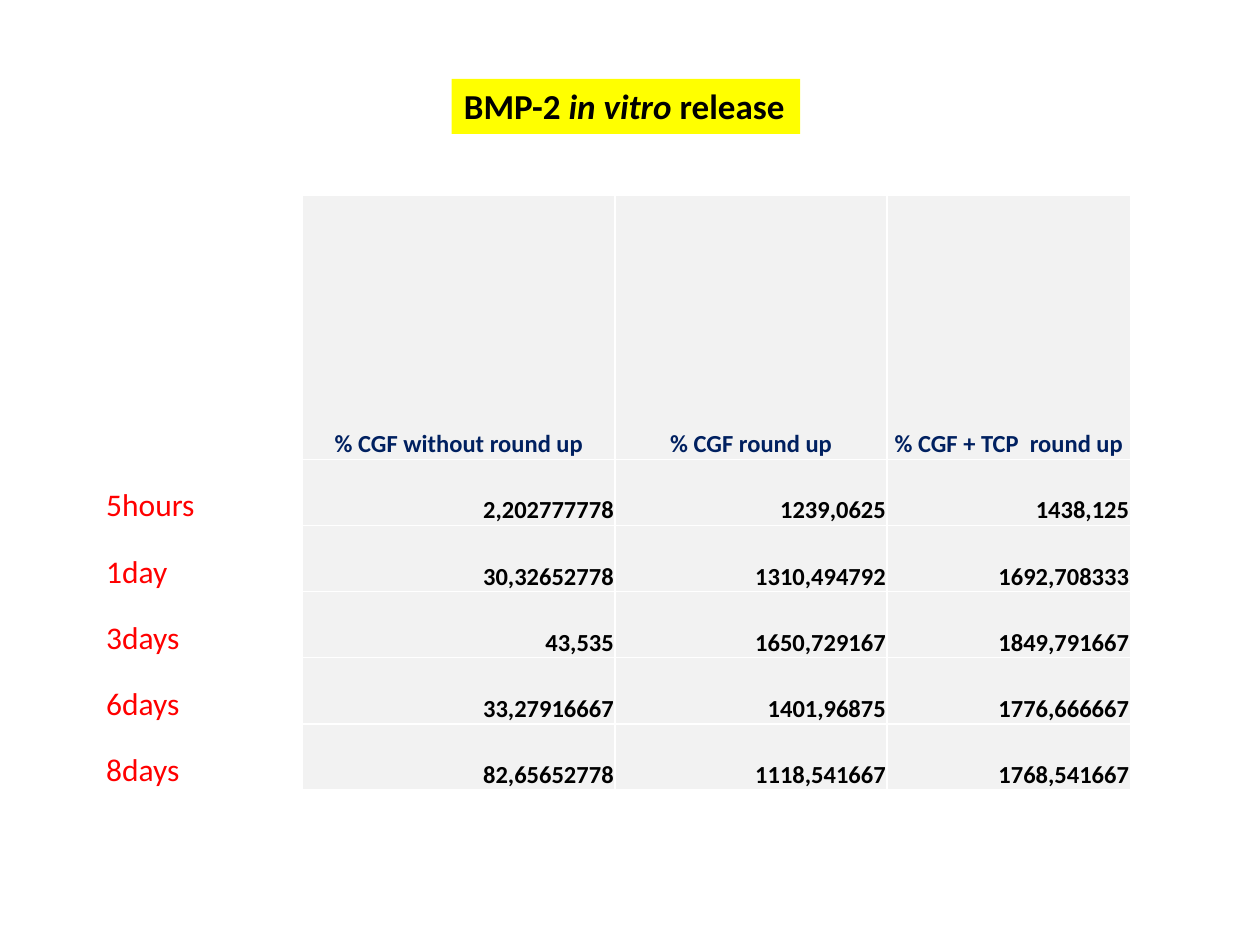
from lxml import etree
from pptx import Presentation
from pptx import util as u
from pptx.dml import color
from pptx.enum import text
from pptx.oxml import ns

COLORS = {"title": "FFFF00", "cell": "F2F2F2", "border": "FFFFFF",
          "header": "002060", "label": "FF0000", "body": "000000"}

HEADERS = ["", "% CGF without round up", "% CGF round up", "% CGF + TCP  round up"]
RELEASE = [
    ["5hours", "2,202777778", "1239,0625", "1438,125"],
    ["1day", "30,32652778", "1310,494792", "1692,708333"],
    ["3days", "43,535", "1650,729167", "1849,791667"],
    ["6days", "33,27916667", "1401,96875", "1776,666667"],
    ["8days", "82,65652778", "1118,541667", "1768,541667"],
]


class SlideBuilder:
    font = "Calibri"
    border_width = u.Pt(1)
    cell_format = {"margin_left": u.Pt(0.7), "margin_right": u.Pt(0.7),
                   "margin_top": u.Pt(0.7), "margin_bottom": 0,
                   "vertical_anchor": text.MSO_ANCHOR.BOTTOM}
    # Font size, weight, colour and alignment of each kind of cell
    cell_text = {
        "header": (14, True, text.PP_ALIGN.CENTER),
        "label": (18, False, text.PP_ALIGN.LEFT),
        "body": (14, True, text.PP_ALIGN.RIGHT),
    }

    def __init__(self, page):
        self.page = page

    def rgb(self, name):
        return color.RGBColor.from_string(COLORS[name])

    def span(self, para, words, color_name, **format_values):
        span = para.add_run()
        span.text = words
        span.font.color.rgb = self.rgb(color_name)
        for name, value in {"name": self.font, **format_values}.items():
            setattr(span.font, name, value)

    def title(self, left, top, width, height, parts):
        box = self.page.shapes.add_textbox(*map(u.Pt, (left, top, width, height)))
        box.fill.solid()
        box.fill.fore_color.rgb = self.rgb("title")
        frame_format = {"word_wrap": False,
                        "auto_size": text.MSO_AUTO_SIZE.SHAPE_TO_FIT_TEXT}
        for name, value in frame_format.items():
            setattr(box.text_frame, name, value)
        for words, italic in parts:
            self.span(box.text_frame.paragraphs[0], words, "body",
                      size=u.Pt(20), bold=True, italic=italic)

    def borders(self, cell):
        properties = cell._tc.get_or_add_tcPr()
        for index, side in enumerate(("a:lnL", "a:lnR", "a:lnT", "a:lnB")):
            line = etree.Element(ns.qn(side), w=str(self.border_width))
            fill = etree.SubElement(line, ns.qn("a:solidFill"))
            etree.SubElement(fill, ns.qn("a:srgbClr"), val=COLORS["border"])
            properties.insert(index, line)

    def cell(self, cell, words, kind, filled):
        for name, value in self.cell_format.items():
            setattr(cell, name, value)
        if filled:
            cell.fill.solid()
            cell.fill.fore_color.rgb = self.rgb("cell")
        else:
            cell.fill.background()
        self.borders(cell)
        if words:
            size, bold, alignment = self.cell_text[kind]
            para = cell.text_frame.paragraphs[0]
            para.alignment = alignment
            self.span(para, words, kind, size=u.Pt(size), bold=bold)

    def table(self, left, top, widths, heights, rows):
        bounds = (left, top, sum(widths), sum(heights))
        table = self.page.shapes.add_table(
            len(rows), len(widths), *map(u.Pt, bounds)).table
        table.first_row = table.horz_banding = False
        for column, width in zip(table.columns, widths):
            column.width = u.Pt(width)
        for row, height in zip(table.rows, heights):
            row.height = u.Pt(height)
        for r, row in enumerate(rows):
            for c, words in enumerate(row):
                kind = "header" if r == 0 else "label" if c == 0 else "body"
                self.cell(table.cell(r, c), words, kind, filled=c > 0)


def main():
    deck = Presentation()
    deck.slide_width, deck.slide_height = u.Pt(720), u.Pt(540)
    builder = SlideBuilder(deck.slides.add_slide(deck.slide_layouts[6]))

    # Release values by time and preparation
    builder.table(60, 111.5, [113, 178.5, 155.5, 139],
                  [151] + [37.8] * len(RELEASE), [HEADERS] + RELEASE)

    # Highlighted title
    builder.title(258, 45, 199.2, 31.5,
                  [("BMP-2 ", False), ("in vitro ", True), ("release", False)])

    deck.save("out.pptx")


if __name__ == "__main__":
    main()
